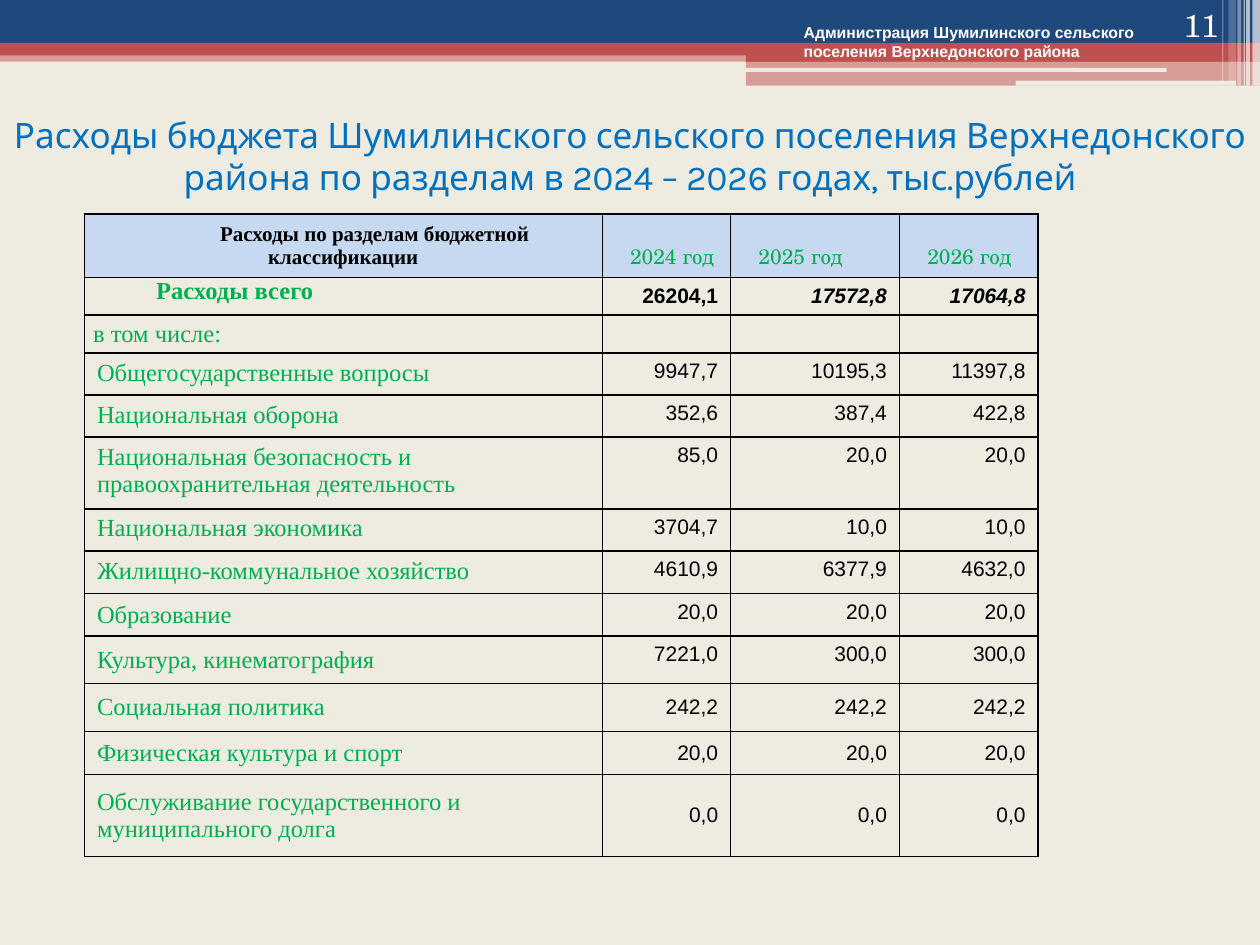
from lxml.etree import SubElement
from pptx import Presentation
from pptx.dml.color import RGBColor
from pptx.enum.shapes import MSO_SHAPE
from pptx.enum.text import MSO_ANCHOR, PP_ALIGN
from pptx.oxml import parse_xml
from pptx.oxml.ns import nsdecls, qn
from pptx.util import Inches, Pt

COLORS = {
    "paper": "EEECE1", "navy": "1F497D", "red": "C0504D", "white": "FFFFFF",
    "title": "0070C0", "green": "00B050", "black": "000000", "header": "C6D9F1",
}
SERIF, SANS, SCHOOL = "Times New Roman", "Arial", "TeX Gyre Schola"
TOP, MIDDLE, BOTTOM = MSO_ANCHOR.TOP, MSO_ANCHOR.MIDDLE, MSO_ANCHOR.BOTTOM

BANDS = [
    (0, 0.4, 10, 0.09, "red", 50),
    (0, 0, 10, 0.34, "navy", 100),
    (0, 0.34, 10, 0.1, "red", 100),
    (5.92, 0.39, 4.08, 0.1, "red", 100),
    (5.92, 0.48, 4.08, 0.2, "red", 50),
]
SLITS = [(5.91, 0.54, 3.35, 0.03), (8.06, 0.64, 1.75, 0.04)]
STRIPES = [
    (9.94, 0.06, 0.68, 65), (9.89, 0.03, 0.68, 65), (9.87, 0.01, 0.68, 60),
    (9.82, 0.03, 0.68, 40), (9.75, 0.06, 0.64, 20), (9.7, 0.01, 0.64, 30),
]
YEARS = ["2024 год", "2025 год", "2026 год"]
TOTALS = ["26204,1", "17572,8", "17064,8"]
SECTIONS = [
    ("Общегосударственные вопросы", ["9947,7", "10195,3", "11397,8"], 0.33, TOP, TOP),
    ("Национальная оборона", ["352,6", "387,4", "422,8"], 0.33, TOP, TOP),
    ("Национальная безопасность и правоохранительная деятельность",
     ["85,0", "20,0", "20,0"], 0.57, TOP, TOP),
    ("Национальная экономика", ["3704,7", "10,0", "10,0"], 0.33, TOP, TOP),
    ("Жилищно-коммунальное хозяйство", ["4610,9", "6377,9", "4632,0"], 0.34, TOP, TOP),
    ("Образование", ["20,0", "20,0", "20,0"], 0.33, MIDDLE, TOP),
    ("Культура, кинематография", ["7221,0", "300,0", "300,0"], 0.38, MIDDLE, TOP),
    ("Социальная политика", ["242,2", "242,2", "242,2"], 0.38, MIDDLE, MIDDLE),
    ("Физическая культура и спорт", ["20,0", "20,0", "20,0"], 0.34, MIDDLE, MIDDLE),
    ("Обслуживание государственного и муниципального долга",
     ["0,0", "0,0", "0,0"], 0.65, MIDDLE, MIDDLE),
]
COLUMN_WIDTHS = [4.11, 1.02, 1.34, 1.1]
ROW_HEIGHTS = [0.5, 0.3, 0.3] + [section[2] for section in SECTIONS]


def rgb(name):
    """Return the named colour."""
    return RGBColor.from_string(COLORS[name])


def write(frame, text, size=12, font=SANS, color="black", bold=False, italic=False,
          align=PP_ALIGN.LEFT, left=0, first=0, before=0, after=0):
    """Write one formatted paragraph into a text frame."""
    paragraph = frame.paragraphs[0]
    paragraph.alignment = align
    paragraph.space_before, paragraph.space_after = Pt(before), Pt(after)
    properties = paragraph._p.get_or_add_pPr()
    properties.set("marL", str(Inches(left)))
    properties.set("indent", str(Inches(first)))
    run = paragraph.add_run()
    run.text = text
    run.font.size, run.font.name = Pt(size), font
    run.font.bold, run.font.italic = bold, italic
    run.font.color.rgb = rgb(color)


class BudgetSlide:
    """Hold the style and the current slide."""

    def __init__(self, presentation):
        """Add a blank slide on the paper background."""
        self.slide = presentation.slides.add_slide(presentation.slide_layouts[6])
        self.slide.background.fill.solid()
        self.slide.background.fill.fore_color.rgb = rgb("paper")

    def bar(self, left, top, width, height, color, opacity=100, kind=MSO_SHAPE.RECTANGLE):
        """Draw a filled bar without an outline."""
        bar = self.slide.shapes.add_shape(
            kind, Inches(left), Inches(top), Inches(width), Inches(height))
        bar.shadow.inherit = False
        bar.line.fill.background()
        bar.fill.solid()
        bar.fill.fore_color.rgb = rgb(color)
        if opacity < 100:
            tint = bar._element.spPr.find(qn("a:solidFill"))[0]
            SubElement(tint, qn("a:alpha")).set("val", str(opacity * 1000))

    def label(self, text, left, top, width, height, anchor=TOP, **style):
        """Place a wrapped text box."""
        box = self.slide.shapes.add_textbox(
            Inches(left), Inches(top), Inches(width), Inches(height))
        box.text_frame.word_wrap = True
        box.text_frame.vertical_anchor = anchor
        write(box.text_frame, text, **style)

    def table(self, left, top, widths, heights):
        """Add an unstyled table with the given columns and rows."""
        grid = self.slide.shapes.add_table(
            len(heights), len(widths), Inches(left), Inches(top),
            Inches(sum(widths)), Inches(sum(heights))).table
        grid.first_row = grid.horz_banding = False
        for column, width in zip(grid.columns, widths):
            column.width = Inches(width)
        for row, height in zip(grid.rows, heights):
            row.height = Inches(height)
        return grid

    def cell(self, cell, text, anchor=MIDDLE, fill=None, tight=False, **style):
        """Fill one bordered table cell."""
        cell.vertical_anchor = anchor
        if tight:
            cell.margin_left = cell.margin_right = Inches(0.07)
            cell.margin_top = cell.margin_bottom = 0
        if fill:
            cell.fill.solid()
            cell.fill.fore_color.rgb = rgb(fill)
        else:
            cell.fill.background()
        properties = cell._tc.get_or_add_tcPr()
        for position, side in enumerate(("lnL", "lnR", "lnT", "lnB")):
            properties.insert(position, parse_xml(
                f'<a:{side} {nsdecls("a")} w="{Pt(1)}"><a:solidFill>'
                f'<a:srgbClr val="{COLORS["black"]}"/></a:solidFill></a:{side}>'))
        write(cell.text_frame, text, **style)


def add_expenses(page):
    """Build the table of expenses by budget section."""
    grid = page.table(0.67, 1.7, COLUMN_WIDTHS, ROW_HEIGHTS)
    section_style = dict(size=14, font=SERIF, color="green")

    page.cell(grid.cell(0, 0), "Расходы по разделам бюджетной классификации",
              fill="header", font=SERIF, bold=True, align=PP_ALIGN.CENTER, first=0.5)
    page.cell(grid.cell(1, 0), "Расходы всего", anchor=TOP, tight=True,
              bold=True, first=0.5, **section_style)
    page.cell(grid.cell(2, 0), "в том числе:", tight=True, after=6, **section_style)
    for column, (year, total) in enumerate(zip(YEARS, TOTALS), start=1):
        page.cell(grid.cell(0, column), year, anchor=BOTTOM, fill="header",
                  font=SCHOOL, color="green", left=0.12, before=3)
        page.cell(grid.cell(1, column), total, bold=True, italic=column > 1,
                  align=PP_ALIGN.RIGHT)
        page.cell(grid.cell(2, column), "", tight=True)

    for row, (name, amounts, _, name_anchor, amount_anchor) in enumerate(SECTIONS, start=3):
        last = row == len(ROW_HEIGHTS) - 1
        page.cell(grid.cell(row, 0), name, anchor=name_anchor,
                  after=6 if last else 0, **section_style)
        for column, amount in enumerate(amounts, start=1):
            page.cell(grid.cell(row, column), amount, anchor=amount_anchor,
                      align=PP_ALIGN.RIGHT)


def main():
    """Build and save the budget slide."""
    presentation = Presentation()
    presentation.slide_width, presentation.slide_height = Inches(10), Inches(7.5)
    page = BudgetSlide(presentation)
    for band in BANDS:
        page.bar(*band)
    for slit in SLITS:
        page.bar(*slit, "paper", kind=MSO_SHAPE.ROUNDED_RECTANGLE)
    for left, width, height, opacity in STRIPES:
        page.bar(left, 0, width, height, "white", opacity)
    page.label("Расходы бюджета Шумилинского сельского поселения Верхнедонского "
               "района по разделам в 2024 – 2026 годах, тыс.рублей",
               0, 0.84, 10, 0.79, anchor=MIDDLE, size=20, font="Karla",
               color="title", align=PP_ALIGN.CENTER)
    page.label("11", 8.94, 0, 0.83, 0.4, anchor=BOTTOM, size=18, font=SCHOOL,
               color="white", align=PP_ALIGN.RIGHT)
    page.label("Администрация Шумилинского сельского поселения Верхнедонского района",
               6.28, 0.13, 3.11, 0.4, size=9, color="white", bold=True)
    add_expenses(page)
    presentation.save("out.pptx")


if __name__ == "__main__":
    main()
